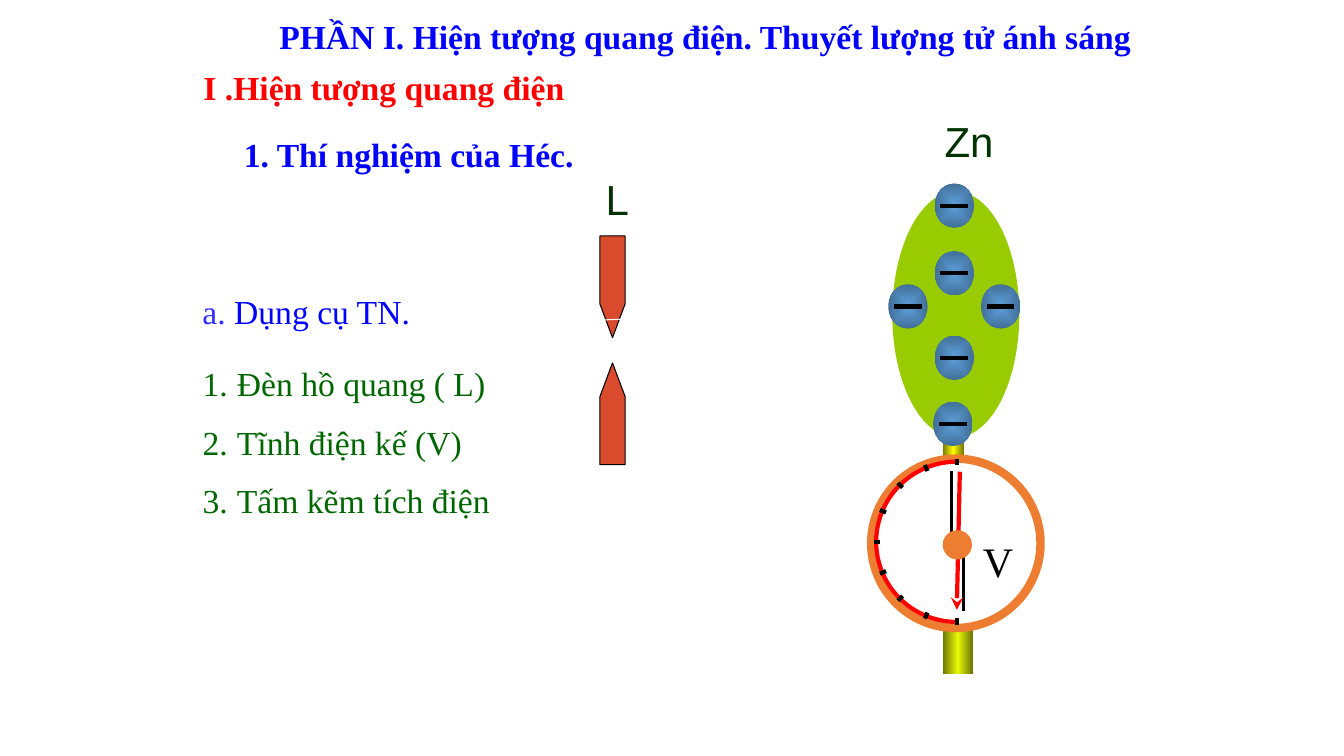
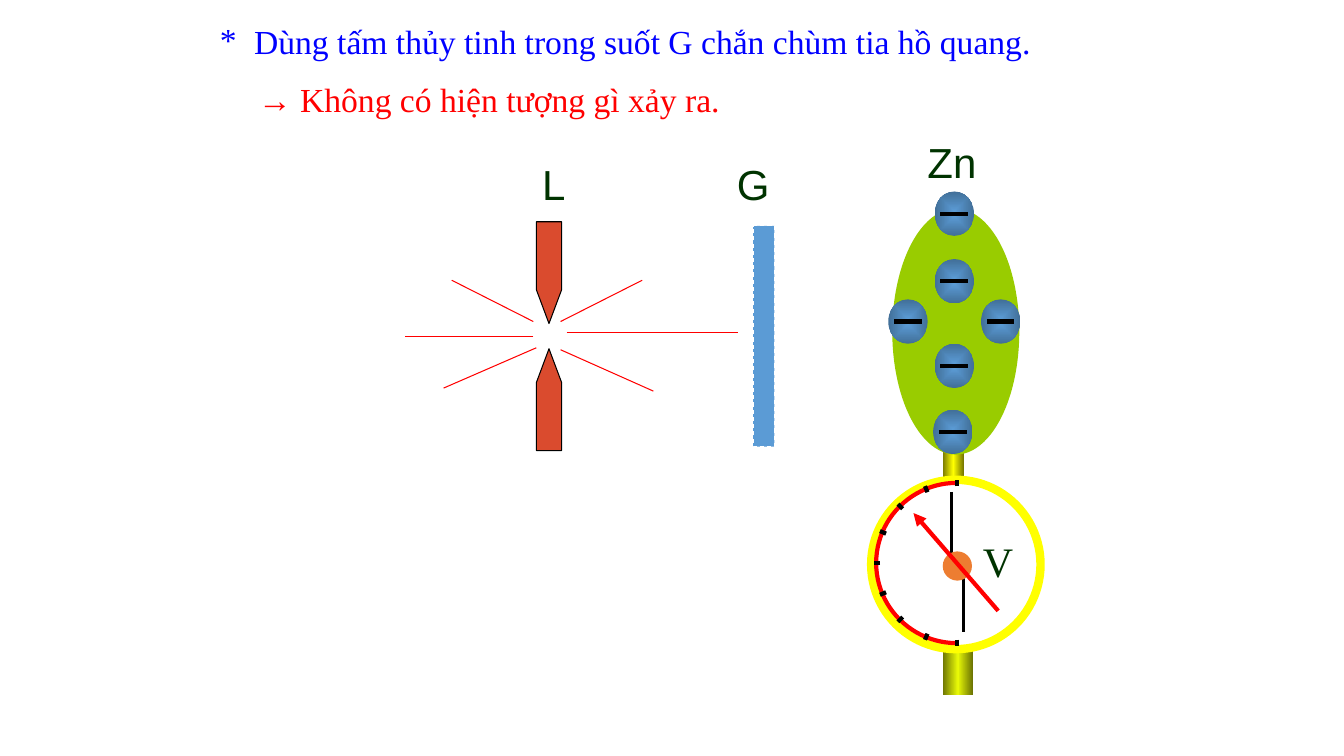
"""Builds two slides on the photoelectric effect experiment."""
from math import cos, radians, sin

from pptx import Presentation
from pptx.dml.color import RGBColor
from pptx.enum.dml import MSO_LINE
from pptx.enum.shapes import MSO_CONNECTOR, MSO_SHAPE
from pptx.enum.text import MSO_ANCHOR, MSO_AUTO_SIZE, PP_ALIGN
from pptx.oxml import parse_xml
from pptx.oxml.ns import nsdecls, qn
from pptx.util import Inches, Pt

RECT, OVAL, ARC = MSO_SHAPE.RECTANGLE, MSO_SHAPE.OVAL, MSO_SHAPE.ARC
STRAIGHT, DASH = MSO_CONNECTOR.STRAIGHT, MSO_LINE.DASH
LEFT, TOP, FIXED = PP_ALIGN.LEFT, MSO_ANCHOR.TOP, MSO_AUTO_SIZE.NONE

CELL = Inches(0.1)
SERIF, SANS = "Times New Roman", "Arial"
BLUE, VIOLET, RED, GREEN = "0000FF", "3333FF", "FF0000", "006600"
DARK_GREEN, BLACK, WHITE = "003300", "000000", "FFFFFF"
ORANGE, YELLOW, LIME, SKY, RUST = "ED7D31", "FFFF00", "99CC00", "5B9BD5", "DA4B2E"
STEM_BLEND = ("767600", "FFFF00", "767600")
FOOT_BLEND = ("6B7303", "E8F907", "6B7303")
ION_BLEND = (SKY, "416F98")
NUMBERED = '<a:buAutoNum {} type="arabicPeriod"/>'
STARRED = '<a:buChar {} char="*"/>'


def rgb(value):
    """Turn a hex string into a colour."""
    return RGBColor.from_string(value)


def cells(*counts):
    """Turn counts of grid cells into lengths."""
    return [round(count * CELL) for count in counts]


class Lesson:
    """Holds the style, the presentation and the current slide."""

    def __init__(self):
        """Start a widescreen presentation."""
        self.deck = Presentation()
        self.deck.slide_width, self.deck.slide_height = Inches(13.33), Inches(7.5)

    def new_slide(self):
        """Add a slide with a title and a body."""
        self.slide = self.deck.slides.add_slide(self.deck.slide_layouts[1])

    def style_run(self, run, color, size=24, font=SERIF, bold=False):
        """Give a run its font, size and colour."""
        run.font.name, run.font.size, run.font.bold = font, Pt(size), bold
        run.font.color.rgb = rgb(color)

    def set_text(self, holder, box, text, color, bullet=None, **style):
        """Place a text holder and fill it with paragraphs."""
        holder.left, holder.top, holder.width, holder.height = cells(*box)
        frame = holder.text_frame
        frame.text = text
        frame.word_wrap, frame.auto_size, frame.vertical_anchor = True, FIXED, TOP
        for order, paragraph in enumerate(frame.paragraphs):
            paragraph.alignment = LEFT
            paragraph.space_before = Pt(13 if order else 0)
            self.style_run(paragraph.runs[0], color, **style)
            self.mark(paragraph, bullet, color)
        return frame

    def mark(self, paragraph, bullet, color):
        """Set the bullet and hanging indent of a paragraph."""
        properties = paragraph._p.get_or_add_pPr()
        hang = Inches(0.34) if bullet else 0
        properties.set("marL", str(hang))
        properties.set("indent", str(-hang))
        parts = ["<a:buNone {}/>"]
        if bullet:
            parts = ['<a:buClr {}><a:srgbClr val="%s"/></a:buClr>' % color,
                     '<a:buFont {} typeface="%s"/>' % SERIF, bullet]
        for part in parts:
            properties.append(parse_xml(part.format(nsdecls("a"))))

    def title(self, box, text, color, **style):
        """Fill the title placeholder."""
        self.set_text(self.slide.shapes.title, box, text, color, **style)

    def body(self, box, text, color, **style):
        """Fill the body placeholder."""
        self.set_text(self.slide.placeholders[1], box, text, color, **style)

    def label(self, box, text, color, **style):
        """Add a text box."""
        holder = self.slide.shapes.add_textbox(*cells(*box))
        return self.set_text(holder, box, text, color, **style)

    def symbol(self, left, top, text, color=DARK_GREEN, font=SANS):
        """Add the large letter that names a part."""
        self.label((left, top, 8.4, 6), text, color, size=30, font=font)

    def paint(self, shape, fill, line, width):
        """Set a shape's fill and outline."""
        shape.shadow.inherit = False
        if fill:
            shape.fill.solid()
            shape.fill.fore_color.rgb = rgb(fill)
        else:
            shape.fill.background()
        if line:
            shape.line.color.rgb = rgb(line)
            shape.line.width = Pt(width)
        else:
            shape.line.fill.background()
        return shape

    def shape(self, kind, box, fill=None, line=None, width=0.75):
        """Add a preset shape."""
        added = self.slide.shapes.add_shape(kind, *cells(*box))
        return self.paint(added, fill, line, width)

    def blend(self, kind, box, colors, direction):
        """Add a preset shape with a gradient fill."""
        properties = self.shape(kind, box)._element.spPr
        step = 100000 // (len(colors) - 1)
        stops = "".join(
            f'<a:gs pos="{order * step}"><a:srgbClr val="{color}"/></a:gs>'
            for order, color in enumerate(colors))
        gradient = parse_xml(f'<a:gradFill {nsdecls("a")} rotWithShape="1">'
                             f'<a:gsLst>{stops}</a:gsLst>{direction}</a:gradFill>')
        properties.replace(properties.find(qn("a:noFill")), gradient)

    def tube(self, box, colors):
        """Add a rectangle shaded from side to side."""
        self.blend(RECT, box, colors, '<a:lin ang="0" scaled="1"/>')

    def outline(self, points, fill, line, width, close):
        """Add a freeform through the points."""
        corners = [cells(*point) for point in points]
        builder = self.slide.shapes.build_freeform(*corners[0])
        builder.add_line_segments(corners[1:], close=close)
        self.paint(builder.convert_to_shape(), fill, line, width)

    def line(self, start, end, color, width=0.75, arrow=None):
        """Add a straight line, with an arrowhead if one is named."""
        added = self.slide.shapes.add_connector(STRAIGHT, *cells(*start, *end))
        added.line.color.rgb = rgb(color)
        added.line.width = Pt(width)
        properties = added._element.spPr
        if arrow:
            properties.find(qn("a:ln")).append(
                parse_xml(f'<a:tailEnd {nsdecls("a")} type="{arrow}"/>'))
        properties.append(parse_xml(f'<a:effectLst {nsdecls("a")}/>'))

    def arc_lamp(self, left, top):
        """Draw two electrodes that point at each other."""
        middle, right = left + 1.25, left + 2.5
        for base, way in ((top + 22.7, -1), (top, 1)):
            shoulder, tip = base + 6.75 * way, base + 10.1 * way
            self.outline([(middle, tip), (left, shoulder), (left, base),
                          (right, base), (right, shoulder)], RUST, BLACK, 0.75, True)

    def dial(self, top, rim):
        """Draw the electrometer's stem, foot, scale and rod."""
        self.tube((93.5, top - 5.1, 2.1, 6.3), STEM_BLEND)
        self.tube((93.5, top + 15.5, 3, 5.9), FOOT_BLEND)
        self.shape(OVAL, (86.4, top, 16.8, 16.8), WHITE, rim, 6)
        scale = self.shape(ARC, (86.9, top + 0.3, 16, 15.9), None, RED, 3)
        scale.adjustments[0], scale.adjustments[1] = 54, 162
        for step in range(9):
            angle = radians(90 + 22.5 * step)
            inner, outer = ((94.9 + reach * cos(angle), top + 8.25 + reach * sin(angle))
                            for reach in (7.6, 8.25))
            self.line(inner, outer, BLACK, 3)
        self.outline([(94.4, top + 1.2), (94.4, top + 7.9), (95.6, top + 7.9),
                      (95.6, top + 15.1)], None, BLACK, 2.25, False)

    def hub(self, top):
        """Draw the pivot of the needle."""
        self.shape(OVAL, (93.5, top + 7.1, 2.9, 2.9), ORANGE)

    def ion(self, center, middle):
        """Draw a negative charge."""
        self.blend(OVAL, (center - 1.95, middle - 2.2, 3.9, 4.4), ION_BLEND,
                   '<a:path path="shape"><a:fillToRect l="50000" t="50000" '
                   'r="50000" b="50000"/></a:path>')
        self.line((center - 1.37, middle), (center + 1.37, middle), BLACK, 3)

    def zinc_plate(self, top, first_ion, side_ions):
        """Draw the charged zinc plate."""
        self.shape(OVAL, (88.5, top, 12.6, 24.4), LIME)
        for center, drop in ((94.5, 21.65), (94.65, 0), (94.65, 15.1), (94.65, 6.7)):
            self.ion(center, first_ion + drop)
        for center in (90.05, 99.25):
            self.ion(center, side_ions)


def tools_slide(lesson):
    """Show the apparatus and its list."""
    lesson.new_slide()
    lesson.title((26.7, 1.1, 92, 5),
                 "PHẦN I. Hiện tượng quang điện. Thuyết lượng tử ánh sáng", BLUE, bold=True)
    lesson.body((19.1, 35.5, 33, 17.2),
                "Đèn hồ quang ( L)\nTĩnh điện kế (V)\nTấm kẽm tích điện",
                GREEN, bullet=NUMBERED)
    lesson.label((19.2, 6.1, 43.3, 5.1), "I .Hiện tượng quang điện", RED, bold=True)
    lesson.label((23.2, 12.8, 43.3, 5), "1. Thí nghiệm của Héc.", BLUE, bold=True)
    tools = lesson.label((19.1, 28.4, 24.3, 5.1), "a. ", VIOLET)
    heading = tools.paragraphs[0].add_run()
    heading.text = "Dụng cụ TN."
    lesson.style_run(heading, BLUE)

    lesson.arc_lamp(59.5, 23.4)
    lesson.line((53.5, 32), (70.5, 31.3), WHITE)
    lesson.dial(45.5, ORANGE)
    lesson.line((95.2, 46.8), (94.9, 60.5), RED, 3, "stealth")
    lesson.hub(45.5)
    lesson.zinc_plate(19, 20.4, 30.4)
    lesson.symbol(96.5, 52.6, "V", BLACK, SERIF)
    lesson.symbol(92.7, 11, "Zn")
    lesson.symbol(59.1, 16.7, "L")


def glass_slide(lesson):
    """Show the glass plate that blocks the rays."""
    lesson.new_slide()
    lesson.title((20.8, 1.6, 91.6, 5),
                 "Dùng tấm thủy tinh trong suốt G chắn chùm tia hồ quang.",
                 BLUE, bullet=STARRED)
    lesson.body((24.6, 7.3, 87.8, 5), "→ Không có hiện tượng gì xảy ra.", RED)

    for start, end in (((55.6, 31.9), (63.7, 27.8)), ((55.6, 34.7), (64.8, 38.8)),
                       ((52.9, 31.9), (44.8, 27.8)), ((52.9, 33.4), (40.2, 33.4)),
                       ((53.2, 34.5), (44, 38.5)), ((56.2, 33), (73.2, 33))):
        lesson.line(start, end, RED)
    lesson.arc_lamp(53.2, 22)
    glass = lesson.shape(RECT, (74.7, 22.4, 2.1, 21.9), SKY, WHITE)
    glass.line.dash_style = DASH
    lesson.dial(47.6, YELLOW)
    lesson.hub(47.6)
    lesson.zinc_plate(20.7, 21.2, 31.9)
    lesson.symbol(96.5, 52.6, "V", font=SERIF)
    lesson.symbol(91, 13.1, "Zn")
    lesson.symbol(72.1, 15.2, "G")
    lesson.symbol(52.8, 15.2, "L")
    lesson.line((99, 60.6), (90.6, 50.9), RED, 3, "triangle")


def main():
    """Build both slides and save them."""
    lesson = Lesson()
    tools_slide(lesson)
    glass_slide(lesson)
    lesson.deck.save("out.pptx")


if __name__ == "__main__":
    main()
